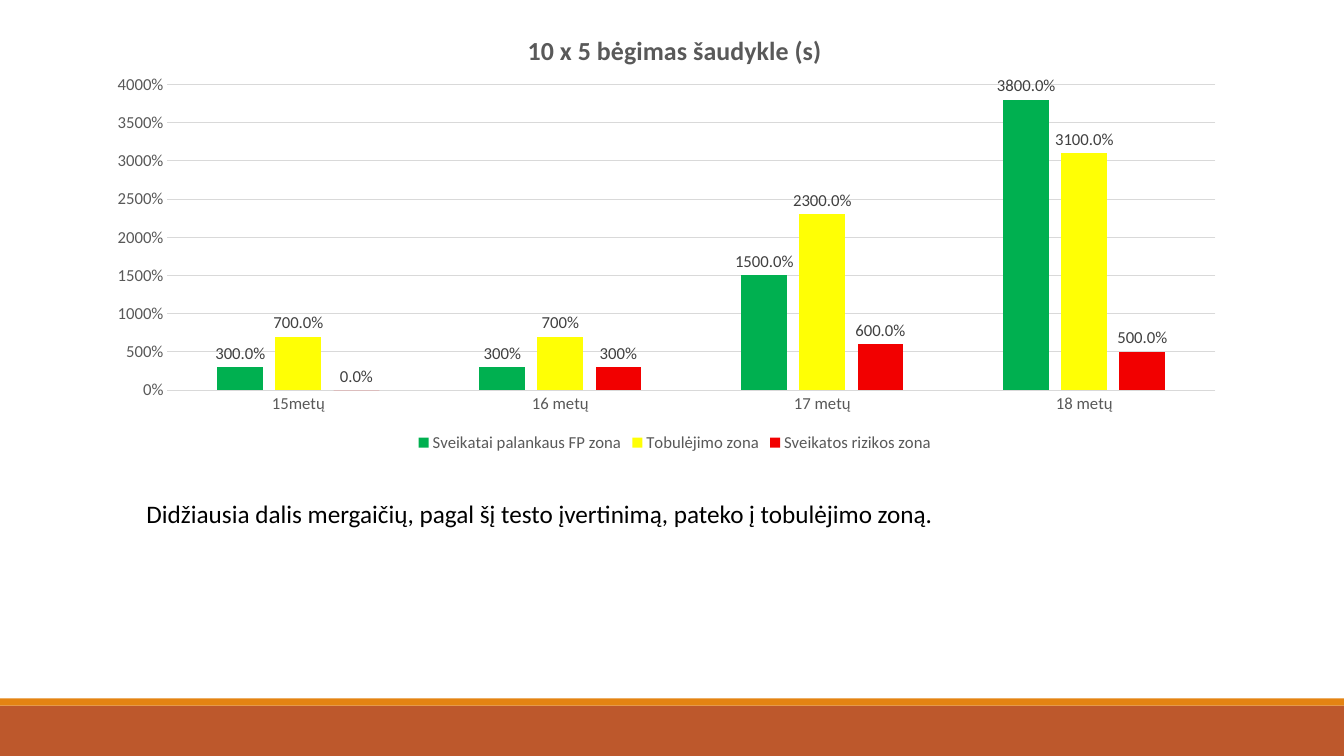
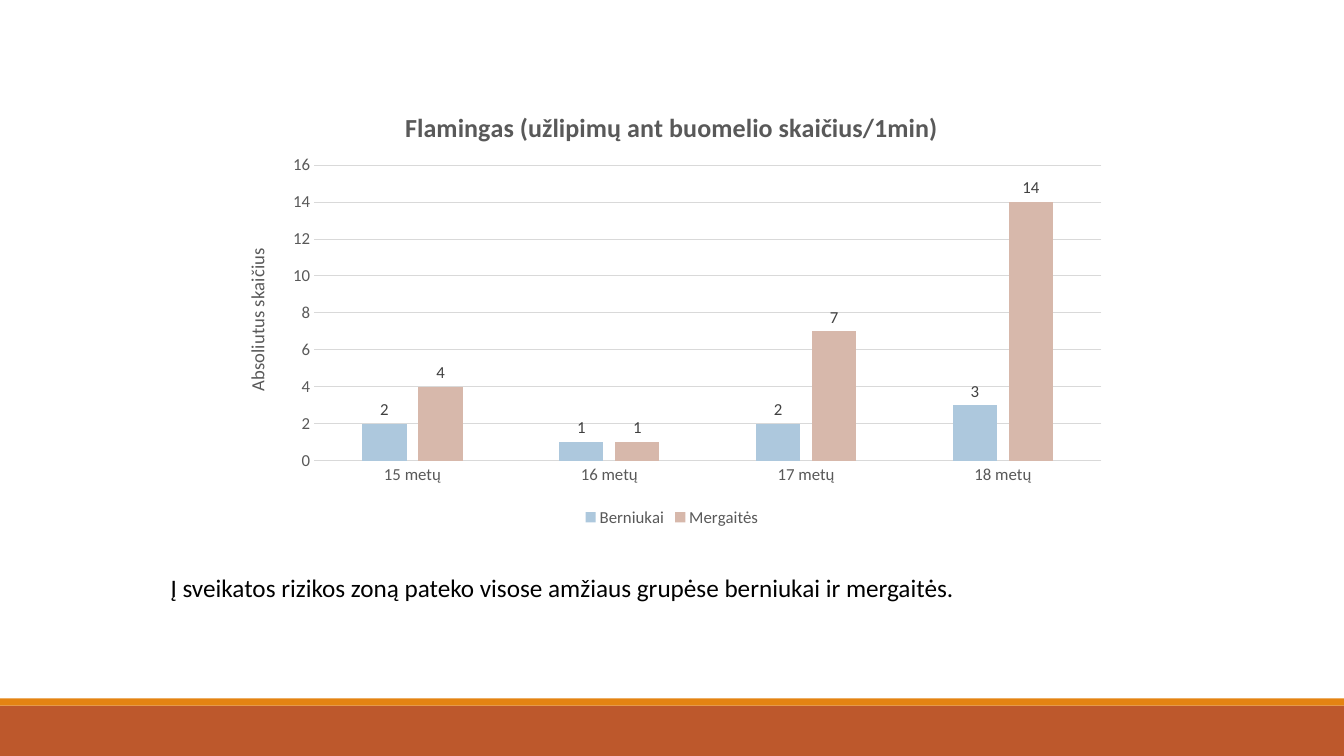
import dataclasses
import typing

import pptx
import pptx.chart.chart
import pptx.chart.data
import pptx.chart.series
import pptx.dml.color
import pptx.dml.fill
import pptx.enum.chart
import pptx.enum.shapes
import pptx.enum.text
import pptx.oxml.ns
import pptx.oxml.xmlchemy
import pptx.slide
import pptx.text.text
import pptx.util

EMU_PER_PX = 9525
SLIDE_WIDTH = 1280
SLIDE_HEIGHT = 720


@dataclasses.dataclass(frozen=True)
class Theme:
    font: str = "Calibri"
    band: str = "BD582C"
    stripe: str = "E48312"
    text: str = "000000"
    chart_text: str = "595959"
    label_text: str = "404040"
    grid: str = "D9D9D9"
    title_size: float = 18.6
    body_size: float = 18
    axis_title_size: float = 13.3
    chart_size: float = 12
    line_width: float = 0.75


class Box(typing.NamedTuple):
    left: int
    top: int
    width: int
    height: int

    def emu(self) -> list[pptx.util.Emu]:
        return [px(value) for value in self]


class Band(typing.NamedTuple):
    box: Box
    color: str


class PlotLayout(typing.NamedTuple):
    x: float
    y: float
    w: float
    h: float


class SeriesSpec(typing.NamedTuple):
    name: str
    values: tuple[int, ...]
    color: str


@dataclasses.dataclass(frozen=True)
class ChartSlide:
    title: str
    chart_box: Box
    plot_layout: PlotLayout
    categories: tuple[str, ...]
    series: tuple[SeriesSpec, ...]
    axis_maximum: int
    axis_step: int
    axis_format: str
    label_format: str
    remark: str
    remark_box: Box
    axis_title: str = ""
    point_format: str = ""
    formatted_points: tuple[int, ...] = ()


THEME = Theme()

BANDS = (
    Band(Box(0, 672, SLIDE_WIDTH, 48), THEME.band),
    Band(Box(0, 665, SLIDE_WIDTH, 7), THEME.stripe),
)

SLIDES = (
    ChartSlide(
        title="10 x 5 bėgimas šaudykle (s)",
        chart_box=Box(112, 13, 1056, 422),
        plot_layout=PlotLayout(0.04, 0.16, 0.95, 0.69),
        categories=("15metų", "16 metų", "17 metų", "18 metų"),
        series=(
            SeriesSpec("Sveikatai palankaus FP zona", (3, 3, 15, 38), "00B050"),
            SeriesSpec("Tobulėjimo zona", (7, 7, 23, 31), "FFFF05"),
            SeriesSpec("Sveikatos rizikos zona", (0, 3, 6, 5), "F20000"),
        ),
        axis_maximum=40,
        axis_step=5,
        axis_format="0%",
        label_format="0%",
        point_format="0.0%",
        formatted_points=(0, 2, 3),
        remark="Didžiausia dalis mergaičių, pagal šį testo įvertinimą, pateko į tobulėjimo zoną.",
        remark_box=Box(130, 470, 1092, 38),
    ),
    ChartSlide(
        title="Flamingas (užlipimų ant buomelio skaičius/1min)",
        chart_box=Box(214, 86, 852, 420),
        plot_layout=PlotLayout(0.1, 0.17, 0.88, 0.67),
        categories=("15 metų", "16 metų", "17 metų", "18 metų"),
        series=(
            SeriesSpec("Berniukai", (2, 1, 2, 3), "ADC8DD"),
            SeriesSpec("Mergaitės", (4, 1, 7, 14), "D7B8AB"),
        ),
        axis_maximum=16,
        axis_step=2,
        axis_format="#,##0",
        label_format="General",
        axis_title="Absoliutus skaičius",
        remark="Į sveikatos rizikos zoną pateko visose amžiaus grupėse berniukai ir mergaitės.",
        remark_box=Box(153, 540, 1108, 38),
    ),
)


def px(value: int) -> pptx.util.Emu:
    return pptx.util.Emu(value * EMU_PER_PX)


def rgb(color: str) -> pptx.dml.color.RGBColor:
    return pptx.dml.color.RGBColor.from_string(color)


def fill_solid(fill: pptx.dml.fill.FillFormat, color: str) -> None:
    fill.solid()
    fill.fore_color.rgb = rgb(color)


def set_font(font: pptx.text.text.Font, size: float, color: str, bold: bool = False) -> None:
    font.name = THEME.font
    font.size = pptx.util.Pt(size)
    font.bold = bold
    font.color.rgb = rgb(color)


def add_band(slide: pptx.slide.Slide, band: Band) -> None:
    shape = slide.shapes.add_shape(pptx.enum.shapes.MSO_SHAPE.RECTANGLE, *band.box.emu())
    shape.shadow.inherit = False
    fill_solid(shape.fill, band.color)
    shape.line.fill.background()


def add_remark(slide: pptx.slide.Slide, text: str, box: Box) -> None:
    frame = slide.shapes.add_textbox(*box.emu()).text_frame
    frame.word_wrap = True
    frame.auto_size = pptx.enum.text.MSO_AUTO_SIZE.SHAPE_TO_FIT_TEXT
    paragraph = frame.paragraphs[0]
    paragraph.text = text
    set_font(paragraph.font, THEME.body_size, THEME.text)


def place_plot(chart: pptx.chart.chart.Chart, plot_layout: PlotLayout) -> None:
    plot_area = chart._chartSpace.chart.plotArea
    for old_layout in plot_area.findall(pptx.oxml.ns.qn("c:layout")):
        plot_area.remove(old_layout)
    layout = pptx.oxml.xmlchemy.OxmlElement("c:layout")
    manual = pptx.oxml.xmlchemy.OxmlElement("c:manualLayout")
    settings = {"layoutTarget": "inner", "xMode": "edge", "yMode": "edge"} | plot_layout._asdict()
    for name, value in settings.items():
        setting = pptx.oxml.xmlchemy.OxmlElement(f"c:{name}")
        setting.set("val", str(value))
        manual.append(setting)
    layout.append(manual)
    plot_area.insert(0, layout)


def style_axes(chart: pptx.chart.chart.Chart, content: ChartSlide) -> None:
    category_axis, value_axis = chart.category_axis, chart.value_axis
    for axis in (category_axis, value_axis):
        axis.major_tick_mark = pptx.enum.chart.XL_TICK_MARK.NONE
        axis.minor_tick_mark = pptx.enum.chart.XL_TICK_MARK.NONE
        set_font(axis.tick_labels.font, THEME.chart_size, THEME.chart_text)
    value_axis.minimum_scale = 0
    value_axis.maximum_scale = content.axis_maximum
    value_axis.major_unit = content.axis_step
    value_axis.tick_labels.number_format = content.axis_format
    value_axis.tick_labels.number_format_is_linked = False
    value_axis.has_major_gridlines = True
    value_axis.format.line.fill.background()
    for line in (category_axis.format.line, value_axis.major_gridlines.format.line):
        line.color.rgb = rgb(THEME.grid)
        line.width = pptx.util.Pt(THEME.line_width)
    if content.axis_title:
        frame = value_axis.axis_title.text_frame
        frame.text = content.axis_title
        frame._txBody.bodyPr.set("rot", "-5400000")
        frame._txBody.bodyPr.set("vert", "horz")
        set_font(frame.paragraphs[0].font, THEME.axis_title_size, THEME.chart_text)


def style_series(series: pptx.chart.series.BarSeries, color: str, content: ChartSlide) -> None:
    fill_solid(series.format.fill, color)
    series.invert_if_negative = False
    outside_end = pptx.enum.chart.XL_LABEL_POSITION.OUTSIDE_END
    labels = series.data_labels
    labels.show_value = True
    labels.number_format = content.label_format
    labels.number_format_is_linked = False
    point_labels = [series.points[index].data_label for index in content.formatted_points]
    for label in (labels, *point_labels):
        label.position = outside_end
        set_font(label.font, THEME.chart_size, THEME.label_text)
    for label_element in series._element.findall(".//" + pptx.oxml.ns.qn("c:dLbl")):
        number_format = pptx.oxml.xmlchemy.OxmlElement("c:numFmt")
        number_format.set("formatCode", content.point_format)
        number_format.set("sourceLinked", "0")
        label_element.insert(1, number_format)


def add_column_chart(slide: pptx.slide.Slide, content: ChartSlide) -> None:
    data = pptx.chart.data.CategoryChartData(number_format=content.label_format)
    data.categories = content.categories
    for item in content.series:
        data.add_series(item.name, item.values)
    chart = slide.shapes.add_chart(
        pptx.enum.chart.XL_CHART_TYPE.COLUMN_CLUSTERED, *content.chart_box.emu(), data
    ).chart
    set_font(chart.font, THEME.chart_size, THEME.chart_text)

    chart.has_title = True
    title = chart.chart_title
    title.include_in_layout = False
    title.text_frame.text = content.title
    set_font(title.text_frame.paragraphs[0].font, THEME.title_size, THEME.chart_text, bold=True)

    chart.has_legend = True
    chart.legend.position = pptx.enum.chart.XL_LEGEND_POSITION.BOTTOM
    chart.legend.include_in_layout = False
    set_font(chart.legend.font, THEME.chart_size, THEME.chart_text)

    plot = chart.plots[0]
    plot.vary_by_categories = False
    plot.gap_width = 219
    plot.overlap = -27
    for series, item in zip(plot.series, content.series):
        style_series(series, item.color, content)
    style_axes(chart, content)
    place_plot(chart, content.plot_layout)


def main() -> None:
    presentation = pptx.Presentation()
    presentation.slide_width = px(SLIDE_WIDTH)
    presentation.slide_height = px(SLIDE_HEIGHT)
    blank_layout = presentation.slide_layouts[6]
    for content in SLIDES:
        slide = presentation.slides.add_slide(blank_layout)
        for band in BANDS:
            add_band(slide, band)
        add_column_chart(slide, content)
        add_remark(slide, content.remark, content.remark_box)
    presentation.save("out.pptx")


if __name__ == "__main__":
    main()
